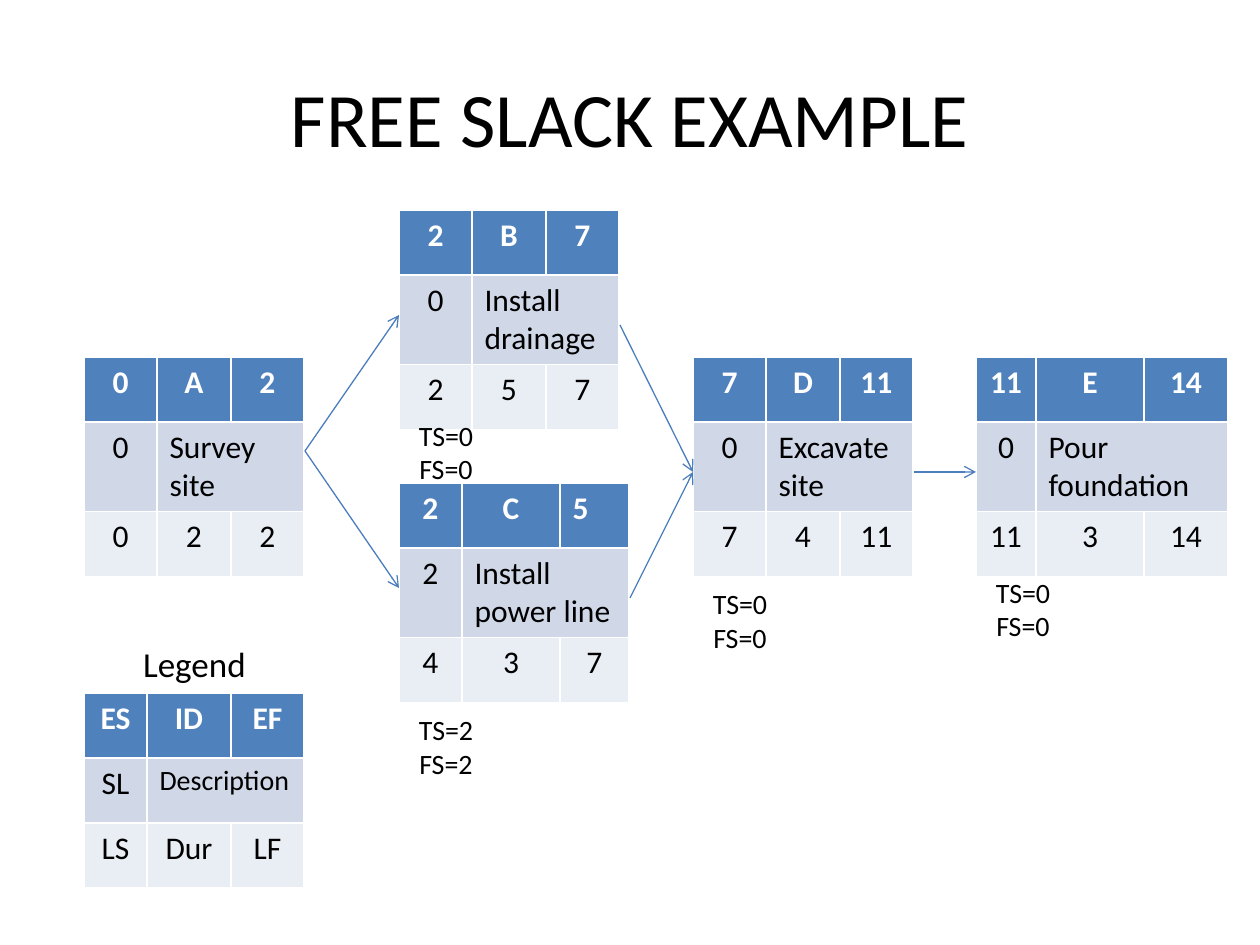
from lxml.etree import SubElement
from pptx import Presentation
from pptx.dml.color import RGBColor
from pptx.enum.shapes import MSO_CONNECTOR
from pptx.enum.text import MSO_ANCHOR, PP_ALIGN
from pptx.oxml.ns import qn
from pptx.util import Emu, Pt

PX = 914400 / 126  # EMU per px


def px(*values):
    return [Emu(round(v * PX)) for v in values]


def rgb(hex_string):
    return RGBColor.from_string(hex_string)


prs = Presentation()
prs.slide_width, prs.slide_height = px(1260, 945)
s = prs.slides.add_slide(prs.slide_layouts[5])

# Title
title = s.shapes.title
title.left, title.top, title.width, title.height = px(63, 38, 1134, 158)
tf = title.text_frame
tf.vertical_anchor = MSO_ANCHOR.MIDDLE
p = tf.paragraphs[0]
p.alignment = PP_ALIGN.CENTER
r = p.add_run()
r.text = "FREE SLACK EXAMPLE"
r.font.size, r.font.name = Pt(44), "Calibri"
r.font.color.rgb = rgb("000000")

# Activity tables and legend: left, top, column widths, rows
ROW_H = 65
ROW_FILLS = ["4F81BD", "D0D8E8", "E9EDF4"]
EVEN = [73, 74, 73]
tables = [
    (84, 357, EVEN, [["0", "A", "2"], ["0", "Survey site"], ["0", "2", "2"]]),
    (84, 693, [63, 84, 73], [["ES", "ID", "EF"], ["SL", "Description"], ["LS", "Dur", "LF"]]),
    (399, 210, EVEN, [["2", "B", "7"], ["0", "Install drainage"], ["2", "5", "7"]]),
    (399, 483, [63, 98, 69], [["2", "C", "5"], ["2", "Install power line"], ["4", "3", "7"]]),
    (693, 357, EVEN, [["7", "D", "11"], ["0", "Excavate site"], ["7", "4", "11"]]),
    (976, 357, [60, 108, 84], [["11", "E", "14"], ["0", "Pour foundation"], ["11", "3", "14"]]),
]
for left, top, widths, rows in tables:
    frame = s.shapes.add_table(3, 3, *px(left, top, sum(widths), 3 * ROW_H))
    table = frame.table
    for column, width in zip(table.columns, widths):
        column.width = px(width)[0]
    table.cell(1, 1).merge(table.cell(1, 2))
    for i, (texts, fill) in enumerate(zip(rows, ROW_FILLS)):
        table.rows[i].height = px(ROW_H)[0]
        for j in range(3):
            cell = table.cell(i, j)
            cell.fill.solid()
            cell.fill.fore_color.rgb = rgb(fill)
        for j, text in enumerate(texts):
            p = table.cell(i, j).text_frame.paragraphs[0]
            # Descriptions and the finish of activity C are left-aligned
            at_left = (i, j) == (1, 1) or (i, j, texts[1]) == (0, 2, "C")
            p.alignment = PP_ALIGN.LEFT if at_left else PP_ALIGN.CENTER
            r = p.add_run()
            r.text = text
            r.font.size = Pt(16 if text == "Description" else 18)
            r.font.name, r.font.bold = "Calibri", i == 0
            r.font.color.rgb = rgb("FFFFFF" if i == 0 else "000000")

# Dependency arrows
arrows = [
    (305, 451, 399, 315),  # A to B
    (305, 451, 399, 588),  # A to C
    (620, 325, 693, 472),  # B to D
    (630, 598, 693, 472),  # C to D
    (914, 472, 976, 472),  # D to E
]
for ends in arrows:
    arrow = s.shapes.add_connector(MSO_CONNECTOR.STRAIGHT, *px(*ends))
    arrow.line.color.rgb = rgb("4B7EBC")
    arrow.line.width = Pt(0.75)
    SubElement(arrow.line._get_or_add_ln(), qn("a:tailEnd"), type="arrow")
    SubElement(arrow._element.spPr, qn("a:effectLst"))

# Legend heading and slack labels
labels = [
    (105, 640, 179, 53, 20, ["Legend"]),
    (399, 410, 94, 84, 16, ["TS=0", "FS=0"]),
    (399, 704, 94, 84, 16, ["TS=2", "FS=2"]),
    (693, 578, 94, 84, 16, ["TS=0", "FS=0"]),
    (976, 567, 94, 84, 16, ["TS=0", "FS=0"]),
]
for left, top, width, height, size, lines in labels:
    sp = s.shapes.add_textbox(*px(left, top, width, height))
    tf = sp.text_frame
    tf.word_wrap = True
    tf.vertical_anchor = MSO_ANCHOR.MIDDLE
    for i, line in enumerate(lines):
        p = tf.add_paragraph() if i else tf.paragraphs[0]
        p.alignment = PP_ALIGN.CENTER
        if line == "Legend":
            p.line_spacing = 0.9
        r = p.add_run()
        r.text = line
        r.font.size, r.font.name = Pt(size), "Calibri"
        r.font.color.rgb = rgb("000000")

prs.save("out.pptx")
